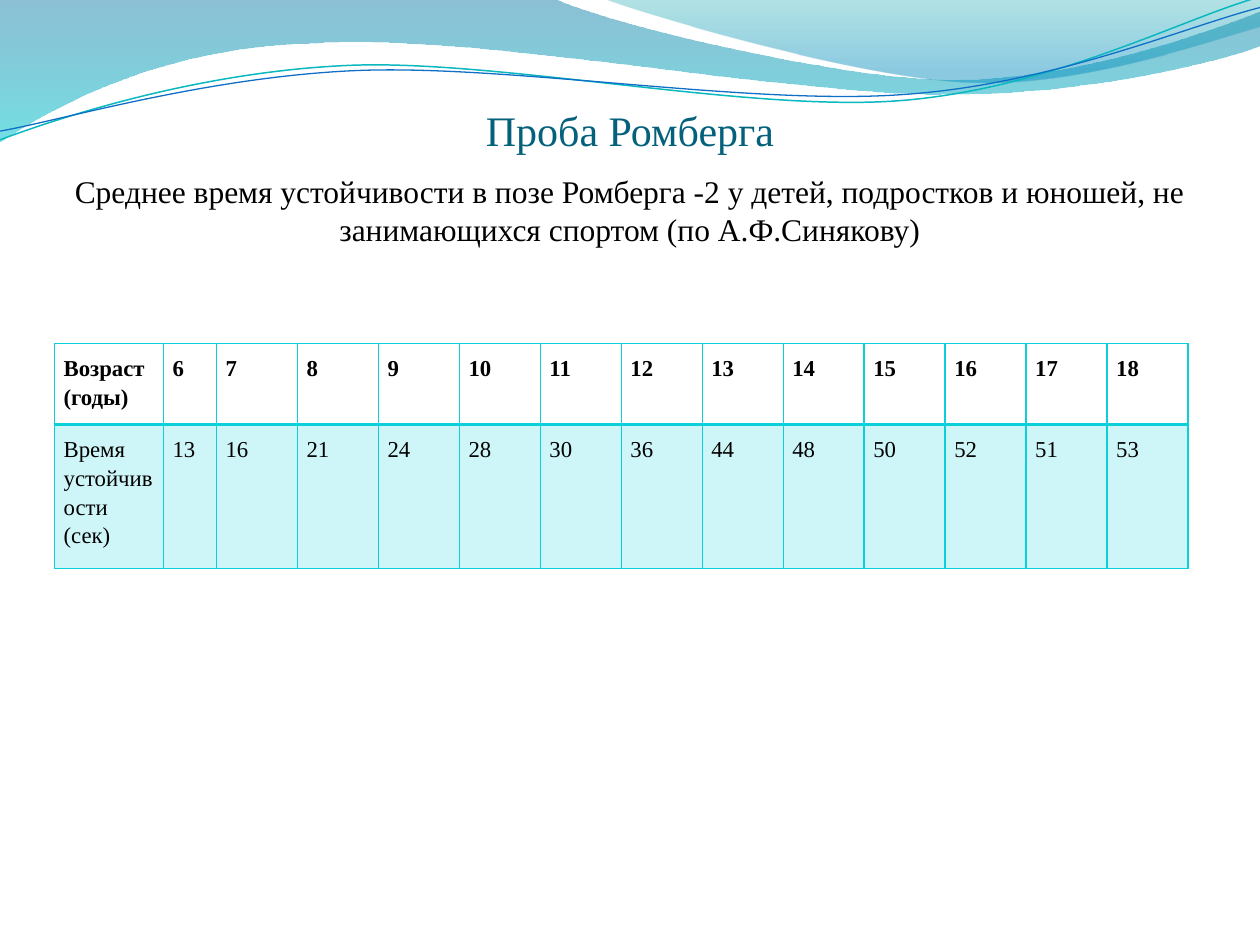
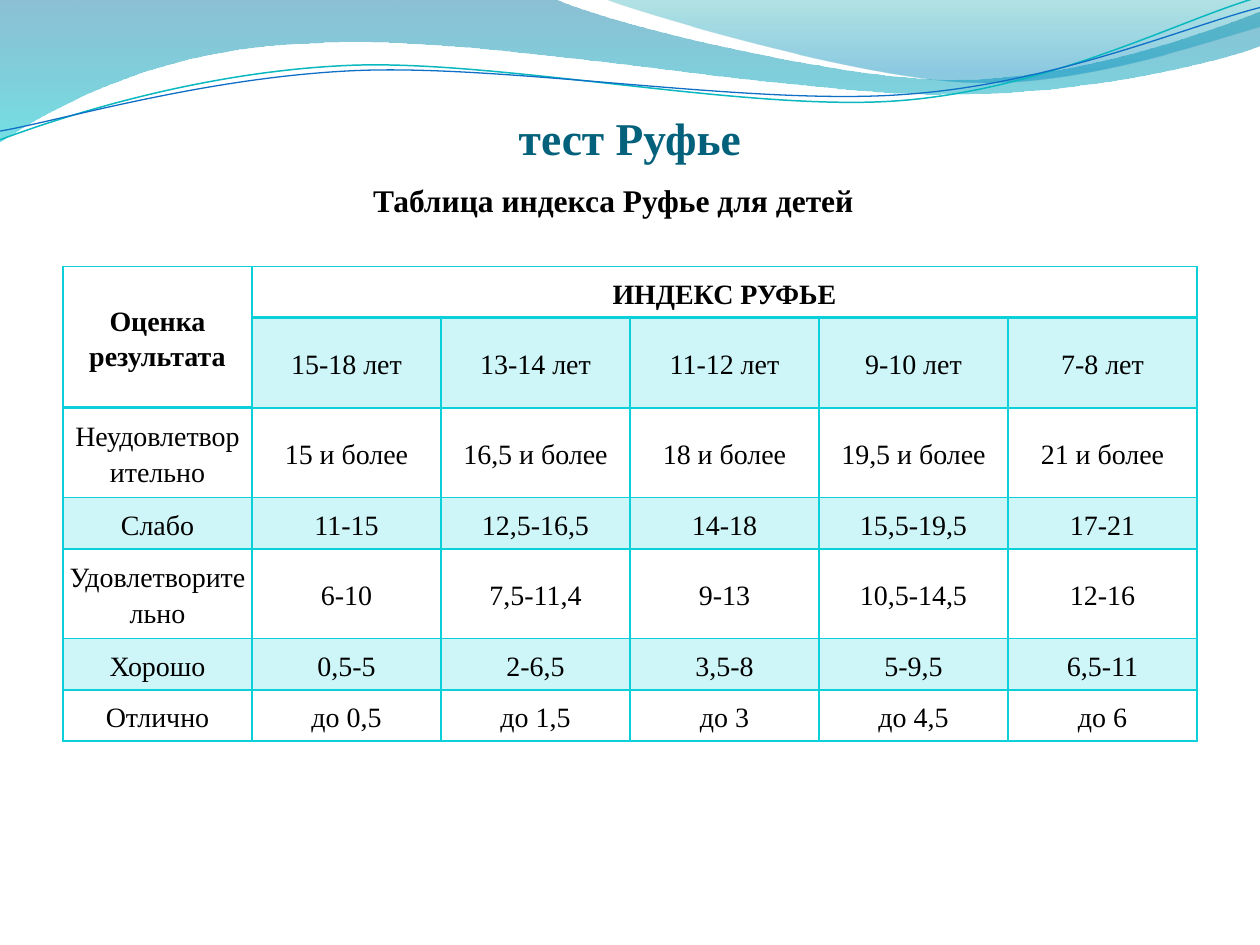
from dataclasses import dataclass

from lxml import etree
from pptx import Presentation
from pptx import util as u
from pptx.dml.color import RGBColor
from pptx.enum import text as t
from pptx.oxml.ns import qn

FONT = "Times New Roman"
BLACK = RGBColor(0x00, 0x00, 0x00)
TITLE_BLUE = RGBColor(0x04, 0x61, 0x7B)
TURQUOISE = RGBColor(0x0B, 0xD0, 0xD9)
DEEP_BLUE = RGBColor(0x00, 0x74, 0xA1)
AQUA = RGBColor(0x00, 0xC6, 0xCF)
SEA_GREEN = RGBColor(0x00, 0xA1, 0xA9)
OCEAN_BLUE = RGBColor(0x00, 0x8B, 0xBF)
LINE_TEAL = RGBColor(0x0A, 0xB8, 0xBF)
LINE_BLUE = RGBColor(0x0F, 0x6F, 0xC6)

CENTER = t.PP_ALIGN.CENTER
LEFT = t.PP_ALIGN.LEFT
MIDDLE = t.MSO_ANCHOR.MIDDLE
TOP = t.MSO_ANCHOR.TOP
BAND_OPACITY = 20
ONE_LINE, TWO_LINES = 29.2, 48.5


@dataclass(frozen=True)
class Stop:
    position: float
    color: RGBColor
    opacity: int


@dataclass(frozen=True)
class Wave:
    """An outline in points: pairs are corners, sixes are Bézier curves."""
    start: tuple
    segments: tuple
    stops: tuple = ()
    line: RGBColor | None = None
    width: float = 0


@dataclass(frozen=True)
class Grid:
    left: float
    top: float
    columns: tuple
    heights: tuple
    rows: tuple
    banded_rows: tuple
    size: float
    inset: float
    align: t.PP_ALIGN = LEFT
    anchor: t.MSO_ANCHOR = TOP
    header_cells: tuple = ()
    merges: tuple = ()


WAVES = (
    Wave((0, 0), ((316.8, -0.7),
                  (342.7, 12.2, 478.1, 45.4, 545.8, 45.4),
                  (614.2, 45.4, 689.8, 18.7, 720, 6.5),
                  (720.7, 25.9),
                  (707.8, 31.7, 626.4, 54.7, 537.1, 54),
                  (447.8, 54, 275, 20.2, 185, 24.5),
                  (92.9, 25.9, 33.1, 59.8, -0.7, 81.4),
                  (0, 0)),
         stops=(Stop(0, DEEP_BLUE, 45), Stop(1, AQUA, 55))),
    Wave((344.9, -0.7), ((366.5, 7.9, 491, 44.6, 553.7, 46.8),
                         (616.3, 49.7, 691.9, 23, 720, 15.1),
                         (720, 0),
                         (344.9, -0.7)),
         stops=(Stop(0, SEA_GREEN, 30), Stop(0.8, OCEAN_BLUE, 45))),
    Wave((0, 79.9), ((34.6, 67, 113.8, 41, 199.4, 37.4),
                     (284.4, 33.8, 427, 64.1, 513.4, 57.6),
                     (599.8, 51.1, 675.4, 10.8, 718.6, -1.4)),
         line=LINE_TEAL, width=0.85),
    Wave((0, 74.9), ((33.8, 69.1, 118.1, 43.9, 203.8, 40.3),
                     (290.2, 36.7, 429.8, 60.5, 516.2, 54),
                     (601.9, 48.2, 677.5, 15.1, 720, 4.3)),
         line=LINE_BLUE, width=0.75),
)

ROMBERG = Grid(
    left=31.2, top=196.4,
    columns=(62.3, 30.3) + (46.28,) * 12,
    heights=(43.4, 76),
    rows=(
        ("Возраст (годы)", *map(str, range(6, 19))),
        ("Время\nустойчивости (сек)", "13", "16", "21", "24", "28", "30",
         "36", "44", "48", "50", "52", "51", "53"),
    ),
    banded_rows=(1,), size=13, inset=5.2,
    header_cells=tuple((0, column) for column in range(14)),
)

RUFFIER = Grid(
    left=36, top=152.4,
    columns=(108,) * 6,
    heights=(ONE_LINE, TWO_LINES, TWO_LINES, ONE_LINE, TWO_LINES, ONE_LINE, ONE_LINE),
    rows=(
        ("Оценка результата", "ИНДЕКС РУФЬЕ", "", "", "", ""),
        ("", "15-18 лет", "13-14 лет", "11-12 лет", "9-10 лет", "7-8 лет"),
        ("Неудовлетворительно", "15 и более", "16,5 и более", "18 и более",
         "19,5 и более", "21 и более"),
        ("Слабо", "11-15", "12,5-16,5", "14-18", "15,5-19,5", "17-21"),
        ("Удовлетворительно", "6-10", "7,5-11,4", "9-13", "10,5-14,5", "12-16"),
        ("Хорошо", "0,5-5", "2-6,5", "3,5-8", "5-9,5", "6,5-11"),
        ("Отлично", "до 0,5", "до 1,5", "до 3", "до 4,5", "до 6"),
    ),
    banded_rows=(1, 3, 5), size=16, inset=3.6, align=CENTER, anchor=MIDDLE,
    header_cells=((1, 0), *((0, column) for column in range(6))),
    merges=(((0, 0), (1, 0)), ((0, 1), (0, 5))),
)


def set_opacity(element, opacities) -> None:
    for color, opacity in zip(element.iter(qn("a:srgbClr")), opacities):
        etree.SubElement(color, qn("a:alpha"), val=str(opacity * 1000))


def write_text(frame, words: str, *, size: float, color: RGBColor = BLACK,
               bold: bool = False, align=CENTER,
               spacing: float | None = None) -> None:
    frame.word_wrap = True
    frame.text = words
    for para in frame.paragraphs:
        para.alignment = align
        para.line_spacing = spacing
        for span in para.runs:
            span.font.name = FONT
            span.font.size = u.Pt(size)
            span.font.bold = bold
            span.font.color.rgb = color


def add_box(page, left: float, top: float, width: float, height: float):
    return page.shapes.add_textbox(*map(u.Pt, (left, top, width, height)))


def add_title(page, words: str, height: float, size: float, bold: bool) -> None:
    frame = add_box(page, 36, 55.4, 648, height).text_frame
    frame.margin_left = frame.margin_right = frame.margin_bottom = 0
    frame.margin_top = u.Pt(3.6)
    frame.vertical_anchor = t.MSO_ANCHOR.BOTTOM
    write_text(frame, words, size=size, bold=bold, color=TITLE_BLUE)


def bend(shape, segments: tuple) -> None:
    """Turn each three line steps that stand for a curve into one Bézier."""
    steps = iter(list(shape.element.iter(qn("a:lnTo"))))
    for segment in segments:
        first, *others = [next(steps) for _ in range(len(segment) // 2)]
        if others:
            first.tag = qn("a:cubicBezTo")
            for step in others:
                first.append(step[0])
                step.getparent().remove(step)


def draw_wave(page, wave: Wave) -> None:
    points = [tuple(map(u.Pt, segment[i:i + 2]))
              for segment in wave.segments for i in range(0, len(segment), 2)]
    builder = page.shapes.build_freeform(*map(u.Pt, wave.start))
    builder.add_line_segments(points, close=bool(wave.stops))
    shape = builder.convert_to_shape()
    bend(shape, wave.segments)
    shape.shadow.inherit = False
    if wave.stops:
        shape.line.fill.background()
        shape.fill.gradient()
        shape.fill.gradient_angle = 270
        for target, stop in zip(shape.fill.gradient_stops, wave.stops):
            target.position = stop.position
            target.color.rgb = stop.color
        set_opacity(shape.element.spPr, [stop.opacity for stop in wave.stops])
    else:
        shape.fill.background()
        shape.line.color.rgb = wave.line
        shape.line.width = u.Pt(wave.width)


def set_borders(cell, bottom_width: float) -> None:
    properties = cell._tc.get_or_add_tcPr()
    for side, width in (("L", 1), ("R", 1), ("T", 1), ("B", bottom_width)):
        line = etree.SubElement(properties, qn(f"a:ln{side}"), w=str(u.Pt(width)))
        fill = etree.SubElement(line, qn("a:solidFill"))
        etree.SubElement(fill, qn("a:srgbClr"), val=str(TURQUOISE))


def fill_cell(cell, banded: bool) -> None:
    if not banded:
        cell.fill.background()
        return
    cell.fill.solid()
    cell.fill.fore_color.rgb = TURQUOISE
    set_opacity(cell._tc.tcPr.find(qn("a:solidFill")), [BAND_OPACITY])


def draw_grid(page, grid: Grid) -> None:
    table = page.shapes.add_table(
        len(grid.rows), len(grid.columns), u.Pt(grid.left), u.Pt(grid.top),
        u.Pt(sum(grid.columns)), u.Pt(sum(grid.heights))).table
    table.horz_banding = False
    for column, width in zip(table.columns, grid.columns):
        column.width = u.Pt(width)
    for row, height in zip(table.rows, grid.heights):
        row.height = u.Pt(height)
    for first, last in grid.merges:
        table.cell(*first).merge(table.cell(*last))
    for r, row in enumerate(grid.rows):
        for c, words in enumerate(row):
            cell = table.cell(r, c)
            is_header = (r, c) in grid.header_cells
            cell.margin_left = cell.margin_right = u.Pt(grid.inset)
            cell.margin_top = cell.margin_bottom = u.Pt(grid.inset)
            cell.vertical_anchor = grid.anchor
            set_borders(cell, bottom_width=2 if is_header else 1)
            fill_cell(cell, r in grid.banded_rows and not is_header)
            write_text(cell.text_frame, words, size=grid.size, bold=is_header,
                       align=grid.align, spacing=1.15)


def add_page(deck):
    page = deck.slides.add_slide(deck.slide_layouts[6])
    for wave in WAVES:
        draw_wave(page, wave)
    return page


def build_romberg(deck) -> None:
    page = add_page(deck)
    add_title(page, "Проба Ромберга", height=33.1, size=24, bold=False)
    draw_grid(page, ROMBERG)
    frame = add_box(page, 19.4, 94.3, 681.1, 51.1).text_frame
    frame.vertical_anchor = MIDDLE
    write_text(frame, "Среднее время устойчивости в позе Ромберга -2 у детей, "
               "подростков и юношей, не занимающихся спортом (по А.Ф.Синякову)",
               size=18)


def build_ruffier(deck) -> None:
    page = add_page(deck)
    add_title(page, "тест Руфье", height=38.9, size=26, bold=True)
    draw_grid(page, RUFFIER)
    frame = add_box(page, 172.8, 100.1, 360, 28.8).text_frame
    write_text(frame, "Таблица индекса Руфье для детей ", size=18, bold=True)


def main() -> None:
    deck = Presentation()
    deck.slide_width, deck.slide_height = u.Pt(720), u.Pt(540)
    build_romberg(deck)
    build_ruffier(deck)
    deck.save("out.pptx")


if __name__ == "__main__":
    main()
